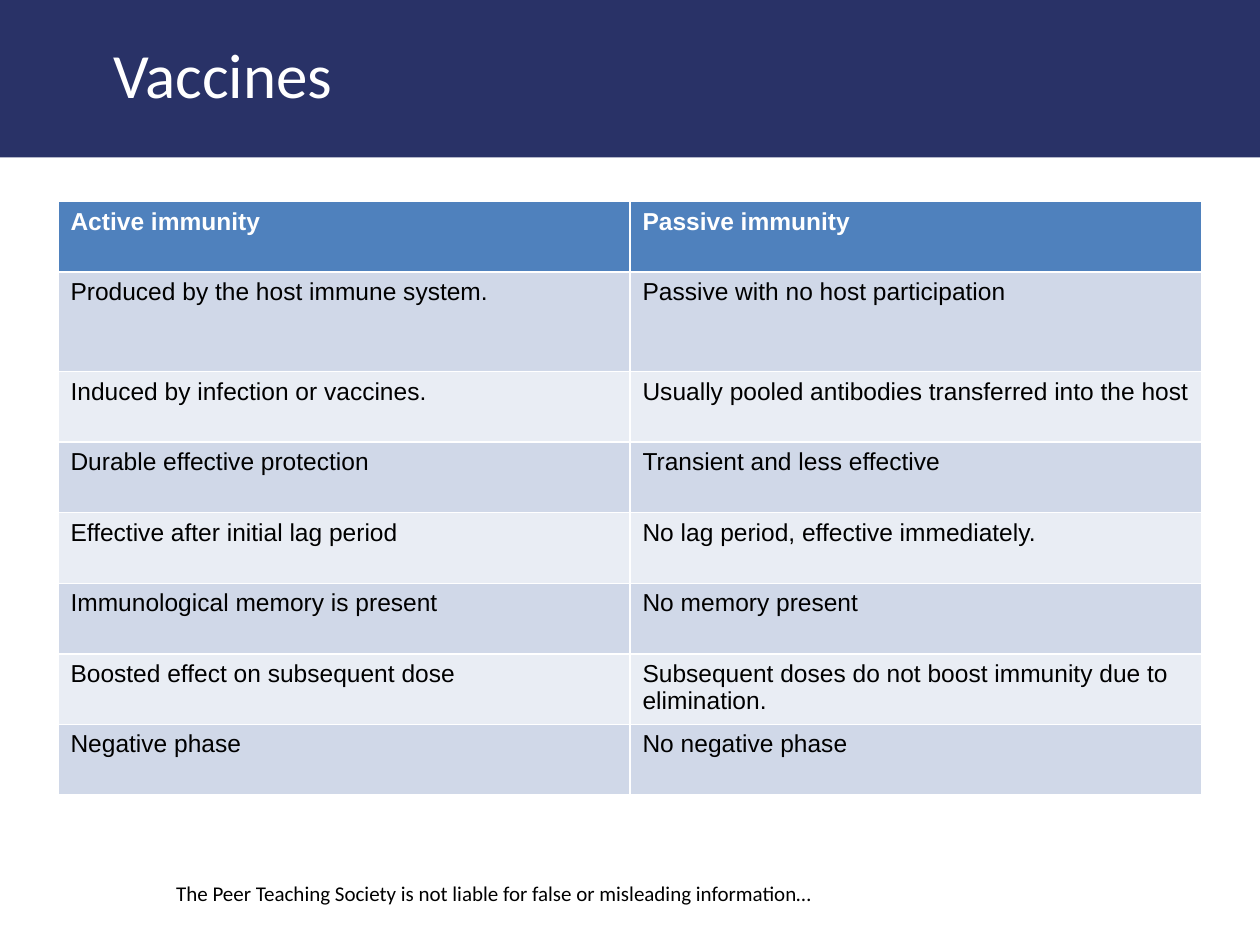
from pptx import Presentation
from pptx.dml.color import RGBColor
from pptx.enum.shapes import MSO_SHAPE
from pptx.enum.text import MSO_ANCHOR, PP_ALIGN
from pptx.util import Inches, Pt

RECT = MSO_SHAPE.RECTANGLE
TOP = MSO_ANCHOR.TOP
LEFT = PP_ALIGN.LEFT

WIDTH, HEIGHT = 10, 7.5
TITLE_ONLY = 5
NAVY, WHITE, BLACK = "293267", "FFFFFF", "000000"
HEAD, BANDS = "4F81BD", ("D0D8E8", "E9EDF4")
ROW, TALL = 0.56, 0.79

ROWS = [
    ("Active immunity", "Passive immunity"),
    ("Produced by the host immune system.",
     "Passive with no host participation"),
    ("Induced by infection or vaccines.",
     "Usually pooled antibodies transferred into the host"),
    ("Durable effective protection", "Transient and less effective"),
    ("Effective after initial lag period",
     "No lag period, effective immediately."),
    ("Immunological memory is present", "No memory present"),
    ("Boosted effect on subsequent dose",
     "Subsequent doses do not boost immunity due to elimination."),
    ("Negative phase", "No negative phase"),
]


def color(code):
    return RGBColor.from_string(code)


def box(*sizes):
    return [Inches(size) for size in sizes]


def write(frame, text, size, name, code, bold=False):
    frame.text = text
    font = frame.paragraphs[0].runs[0].font
    font.size, font.name, font.bold = Pt(size), name, bold
    font.color.rgb = color(code)


def add_title(slide, text):
    """Place the title over a full-width band."""
    title = slide.shapes.title
    title.left, title.top, title.width, title.height = box(0.8, 0.23, 5.11, 0.71)
    frame = title.text_frame
    write(frame, text, 36, "Calibri", WHITE)
    frame.vertical_anchor = TOP
    frame.paragraphs[0].alignment = LEFT

    band = slide.shapes.add_shape(RECT, *box(0, 0, WIDTH, HEIGHT / 6))
    band.shadow.inherit = False
    band.fill.solid()
    band.fill.fore_color.rgb = color(NAVY)
    band.line.fill.background()
    title._element.addprevious(band._element)


def add_grid(slide, rows):
    """Add the table; its style draws the white cell borders."""
    tall = ROW * (len(rows) - 1) + TALL
    place = box(0.46, 1.6, 9.08, tall)
    table = slide.shapes.add_table(len(rows), len(rows[0]), *place).table
    for r, texts in enumerate(rows):
        table.rows[r].height = Inches(TALL if r == 1 else ROW)
        head = r == 0
        for c, text in enumerate(texts):
            cell = table.cell(r, c)
            write(cell.text_frame, text, 14, "Arial",
                  WHITE if head else BLACK, head)
            cell.fill.solid()
            cell.fill.fore_color.rgb = color(HEAD if head else BANDS[(r - 1) % 2])


def add_note(slide, text):
    frame = slide.shapes.add_textbox(*box(1.3, 6.94, 5.54, 0.3)).text_frame
    frame.word_wrap = True
    write(frame, text, 12, "Calibri", BLACK)


def main():
    deck = Presentation()
    deck.slide_width, deck.slide_height = box(WIDTH, HEIGHT)
    slide = deck.slides.add_slide(deck.slide_layouts[TITLE_ONLY])
    add_title(slide, "Vaccines")
    add_grid(slide, ROWS)
    add_note(slide, "The Peer Teaching Society is not liable for false "
                    "or misleading information…")
    deck.save("out.pptx")


if __name__ == "__main__":
    main()
